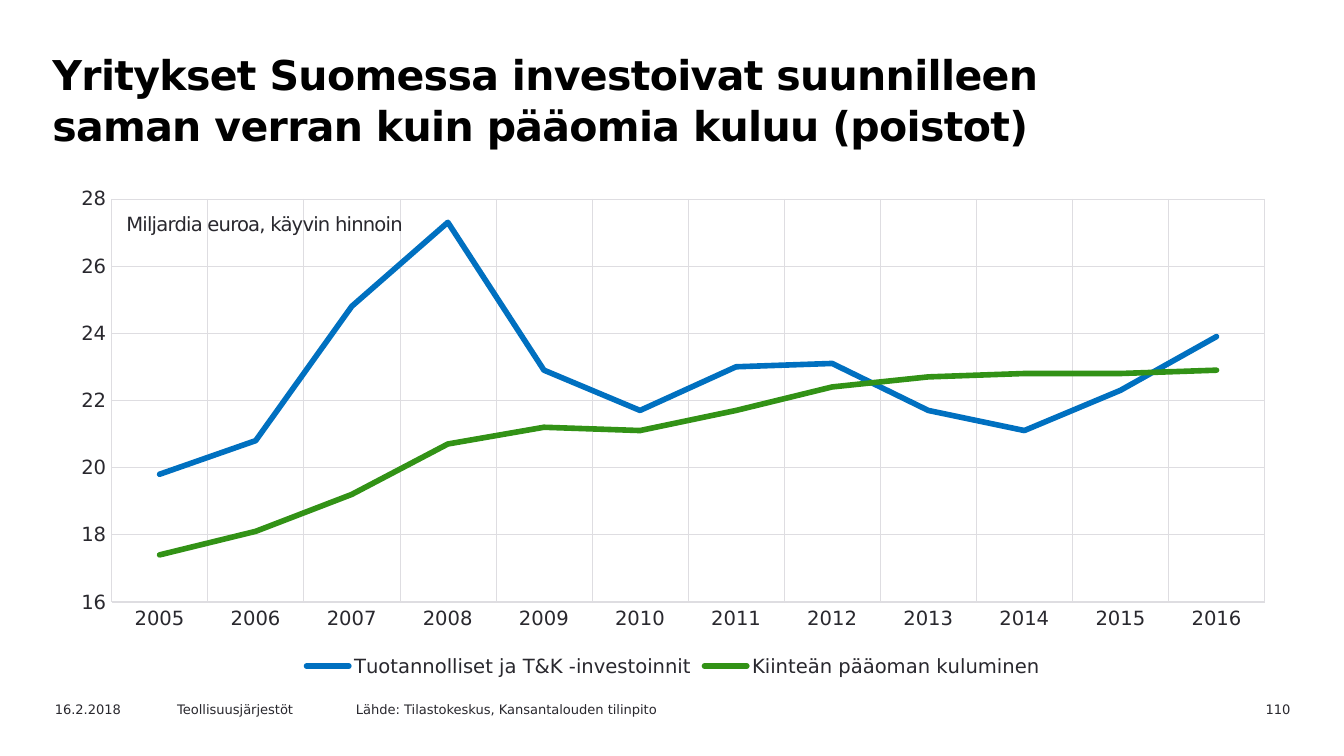
"""Build a slide comparing Finnish business investment with capital consumption."""
import pptx
import pptx.chart.data
import pptx.dml.color
import pptx.enum.chart
import pptx.enum.text
import pptx.oxml
import pptx.oxml.ns
import pptx.util

RGBColor = pptx.dml.color.RGBColor
Inches, Pt = pptx.util.Inches, pptx.util.Pt
ALIGN, ANCHOR = pptx.enum.text.PP_ALIGN, pptx.enum.text.MSO_ANCHOR
BLACK = RGBColor(0x00, 0x00, 0x00)
INK = RGBColor(0x29, 0x28, 0x2E)
GRID = RGBColor(0xDE, 0xDD, 0xE1)
BLUE = RGBColor(0x00, 0x70, 0xC0)
GREEN = RGBColor(0x32, 0x92, 0x16)
FONT = "DejaVu Sans"
WIDTH = 10
HEIGHT = WIDTH * 9 / 16
FOOTER_TOP, FOOTER_HEIGHT = 5.17, 0.18

TITLE = "Yritykset Suomessa investoivat suunnilleen saman verran kuin pääomia kuluu (poistot)"
UNIT = "Miljardia euroa, käyvin hinnoin"
FOOTERS = [
    ("16.2.2018", 0.31, 1, ALIGN.LEFT),
    ("Teollisuusjärjestöt", 1.22, 1.42, ALIGN.LEFT),
    ("Lähde: Tilastokeskus, Kansantalouden tilinpito", 2.55, 3.25, ALIGN.LEFT),
    ("110", 8.76, 0.94, ALIGN.RIGHT),
]
YEARS = [str(year) for year in range(2005, 2017)]
SERIES = [
    ("Tuotannolliset ja T&K -investoinnit", BLUE,
     [19.8, 20.8, 24.8, 27.3, 22.9, 21.7, 23, 23.1, 21.7, 21.1, 22.3, 23.9]),
    ("Kiinteän pääoman kuluminen", GREEN,
     [17.4, 18.1, 19.2, 20.7, 21.2, 21.1, 21.7, 22.4, 22.7, 22.8, 22.8, 22.9]),
]
CHART_WIDTH, CHART_HEIGHT = 9.18, 3.76
PLOT = {
    "x": 0.41 / CHART_WIDTH,
    "y": 0.16 / CHART_HEIGHT,
    "w": 8.58 / CHART_WIDTH,
    "h": 3 / CHART_HEIGHT,
}


def style_font(font, size, color=INK, bold=False):
    font.name, font.size, font.bold = FONT, Pt(size), bold
    font.color.rgb = color


def fill_text(shape, text, size, color=INK, bold=False, align=ALIGN.LEFT, spacing=0):
    tf = shape.text_frame
    tf.word_wrap = True
    tf.auto_size = pptx.enum.text.MSO_AUTO_SIZE.NONE
    tf.vertical_anchor = ANCHOR.TOP
    p = tf.paragraphs[0]
    r = p.add_run()
    r.text = text
    p.alignment = align
    style_font(p.font, size, color, bold)
    if spacing:
        r.font._element.set("spc", str(spacing))
    return tf


def add_text(s, box, text, size, **options):
    return fill_text(s.shapes.add_textbox(*map(Inches, box)), text, size, **options)


def add_title(s):
    title = s.shapes.title
    title.left, title.top = Inches(0.28), Inches(0.31)
    title.width, title.height = Inches(8.74), Inches(0.71)
    tf = fill_text(title, TITLE, 22, BLACK, bold=True, spacing=-35)
    tf.margin_left = Inches(0.11)
    tf.paragraphs[0].line_spacing = Pt(27)
    tf.paragraphs[0].space_before = Pt(0)


def style_axis(axis):
    axis.major_tick_mark = axis.minor_tick_mark = pptx.enum.chart.XL_TICK_MARK.NONE
    axis.has_major_gridlines = True
    line = axis.major_gridlines.format.line
    line.color.rgb, line.width = GRID, Pt(0.25)
    style_font(axis.tick_labels.font, 10.5)


def place_plot(chart):
    area = chart._chartSpace.chart.plotArea
    for old in area.findall(pptx.oxml.ns.qn("c:layout")):
        area.remove(old)
    parts = '<c:layoutTarget val="inner"/><c:xMode val="edge"/><c:yMode val="edge"/>'
    parts += "".join(f'<c:{key} val="{share}"/>' for key, share in PLOT.items())
    area.insert(0, pptx.oxml.parse_xml(
        f'<c:layout {pptx.oxml.ns.nsdecls("c")}><c:manualLayout>{parts}'
        '</c:manualLayout></c:layout>'))


def add_line_chart(s):
    data = pptx.chart.data.CategoryChartData(number_format="0.0")
    data.categories = YEARS
    for name, _, values in SERIES:
        data.add_series(name, values)
    box = map(Inches, (0.42, 1.32, CHART_WIDTH, CHART_HEIGHT))
    chart = s.shapes.add_chart(pptx.enum.chart.XL_CHART_TYPE.LINE, *box, data).chart
    chart.has_title = False
    style_font(chart.font, 10)
    chart.has_legend = True
    chart.legend.position = pptx.enum.chart.XL_LEGEND_POSITION.BOTTOM
    chart.legend.include_in_layout = False
    style_font(chart.legend.font, 10.5)
    years, values = chart.category_axis, chart.value_axis
    style_axis(years)
    style_axis(values)
    years.format.line.color.rgb, years.format.line.width = GRID, Pt(0.75)
    values.format.line.fill.background()
    values.minimum_scale, values.maximum_scale, values.major_unit = 16, 28, 2
    values.tick_labels.number_format = "#,##0"
    values.tick_labels.number_format_is_linked = False
    chart.plots[0].vary_by_categories = False
    for line, (_, color, _) in zip(chart.plots[0].series, SERIES):
        line.smooth = False
        line.marker.style = pptx.enum.chart.XL_MARKER_STYLE.NONE
        line.format.line.color.rgb, line.format.line.width = color, Pt(3)
        line.format.line._get_or_add_ln().set("cap", "rnd")
    place_plot(chart)


def main():
    prs = pptx.Presentation()
    prs.slide_width, prs.slide_height = Inches(WIDTH), Inches(HEIGHT)
    s = prs.slides.add_slide(prs.slide_layouts[5])
    add_title(s)
    for text, left, width, align in FOOTERS:
        add_text(s, (left, FOOTER_TOP, width, FOOTER_HEIGHT), text, 7, align=align)
    add_line_chart(s)
    tf = add_text(s, (0.9, 1.54, 3.31, 0.26), UNIT, 10.5, spacing=-40)
    tf.margin_left = tf.margin_top = tf.margin_right = tf.margin_bottom = Inches(0.04)
    prs.save("out.pptx")


if __name__ == "__main__":
    main()
